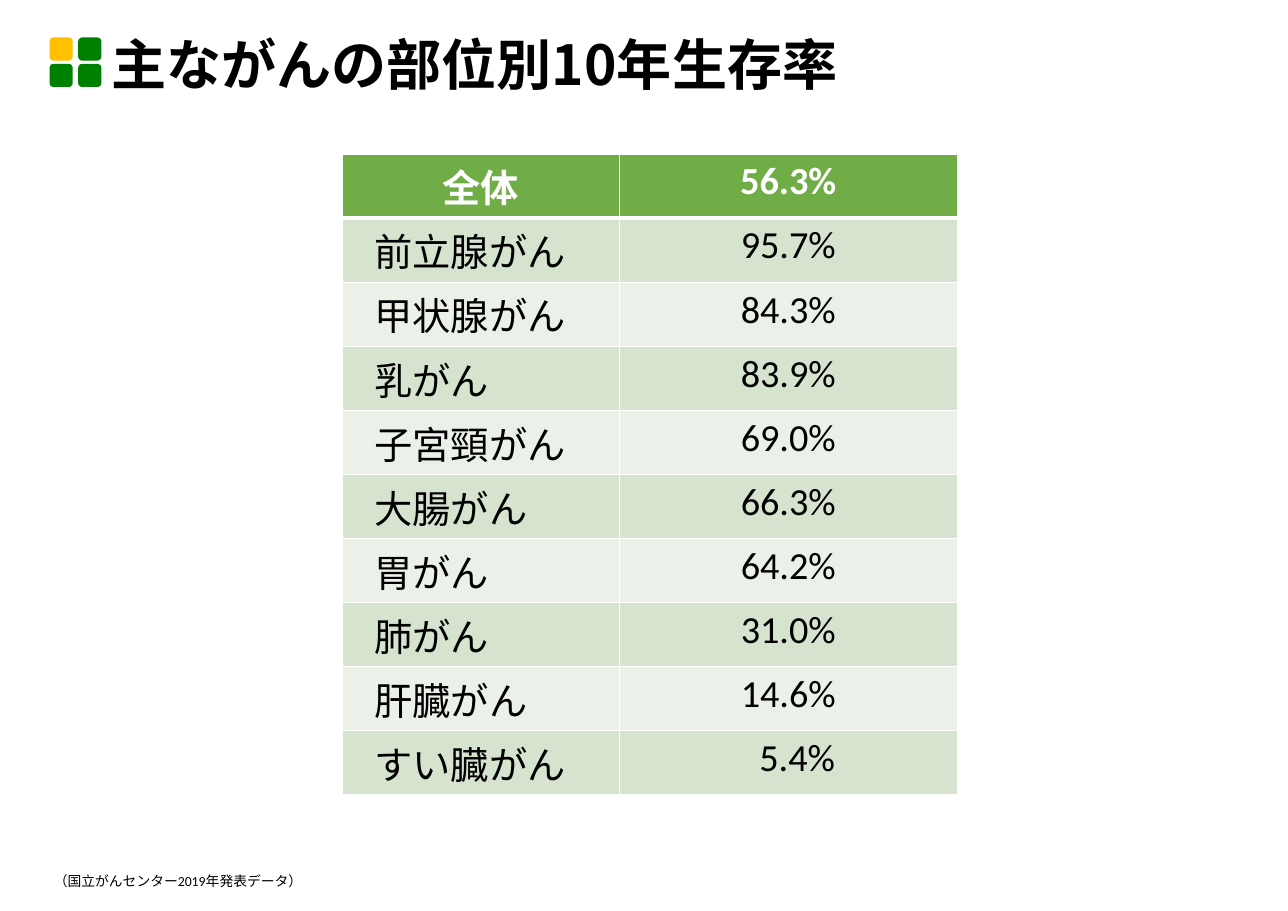
from lxml import etree
from pptx import Presentation
from pptx.dml.color import RGBColor
from pptx.enum.shapes import MSO_SHAPE
from pptx.enum.text import MSO_ANCHOR, MSO_AUTO_SIZE, PP_ALIGN
from pptx.oxml.ns import qn
from pptx.util import Inches, Pt

COLORS = {
    "white": "FFFFFF",
    "black": "000000",
    "header": "70AD47",
    "dark_band": "D5E3CF",
    "light_band": "EBF1E9",
    "yellow": "FFC000",
    "green": "008000",
}
LATIN_FONT = "Calibri"
JAPANESE_FONT = "Noto Sans CJK JP"
SURVIVAL_RATES = [
    ("全体", "56.3%"),
    ("前立腺がん", "95.7%"),
    ("甲状腺がん", "84.3%"),
    ("乳がん", "83.9%"),
    ("子宮頸がん", "69.0%"),
    ("大腸がん", "66.3%"),
    ("胃がん", "64.2%"),
    ("肺がん", "31.0%"),
    ("肝臓がん", "14.6%"),
    ("すい臓がん", "5.4%"),
]


def rgb(name):
    return RGBColor.from_string(COLORS[name])


def format_text(paragraph, size, color="black", bold=False, latin=LATIN_FONT):
    for run in paragraph.runs:
        font = run.font
        font.size = Pt(size)
        font.bold = bold
        font.name = latin
        font.color.rgb = rgb(color)
        east_asian = etree.SubElement(font._element, qn("a:ea"))
        east_asian.set("typeface", JAPANESE_FONT)


def add_title(slide, text):
    title = slide.shapes.title
    title.left, title.top = Inches(0.91), Inches(0.27)
    title.width, title.height = Inches(9.92), Inches(0.68)
    frame = title.text_frame
    frame.text = text
    frame.auto_size = MSO_AUTO_SIZE.NONE
    frame.vertical_anchor = MSO_ANCHOR.MIDDLE
    paragraph = frame.paragraphs[0]
    paragraph.alignment = PP_ALIGN.LEFT
    paragraph.line_spacing = 0.9
    format_text(paragraph, 36, bold=True, latin=JAPANESE_FONT)


def add_title_mark(slide):
    group = slide.shapes.add_group_shape()
    for row in range(2):
        for column in range(2):
            square = group.shapes.add_shape(
                MSO_SHAPE.ROUNDED_RECTANGLE,
                Inches(0.45 + 0.26 * column), Inches(0.34 + 0.24 * row),
                Inches(0.21), Inches(0.21))
            square.shadow.inherit = False
            square.fill.solid()
            square.fill.fore_color.rgb = rgb("green" if row or column else "yellow")
            square.line.fill.background()


def set_borders(cell, bottom_width):
    properties = cell._tc.get_or_add_tcPr()
    for side, width in (("L", 1), ("R", 1), ("T", 1), ("B", bottom_width)):
        line = etree.SubElement(properties, qn(f"a:ln{side}"), w=str(Pt(width)))
        fill = etree.SubElement(line, qn("a:solidFill"))
        etree.SubElement(fill, qn("a:srgbClr"), val=COLORS["white"])


def set_cell(cell, text, fill, centered, indent, header):
    set_borders(cell, 3 if header else 1)
    cell.fill.solid()
    cell.fill.fore_color.rgb = rgb(fill)
    cell.margin_left = cell.margin_right = Inches(0.09)
    cell.margin_top = cell.margin_bottom = Inches(0.04)
    cell.text_frame.text = text
    paragraph = cell.text_frame.paragraphs[0]
    paragraph.alignment = PP_ALIGN.CENTER if centered else PP_ALIGN.LEFT
    if indent:
        paragraph._p.get_or_add_pPr().set("marL", str(Inches(indent)))
    format_text(paragraph, 25, "white" if header else "black", bold=header)


def add_rate_table(slide):
    table = slide.shapes.add_table(
        len(SURVIVAL_RATES), 2,
        Inches(3.11), Inches(1.4), Inches(5.58), Inches(5.68)).table
    table.columns[0].width = Inches(2.51)
    table.columns[1].width = Inches(3.07)
    for index, (site, rate) in enumerate(SURVIVAL_RATES):
        header = index == 0
        fill = "header" if header else "dark_band" if index % 2 else "light_band"
        rate_indent = 0.16 if len(rate) < 5 else 0
        set_cell(table.cell(index, 0), site, fill, header, 0 if header else 0.2, header)
        set_cell(table.cell(index, 1), rate, fill, True, rate_indent, header)


def add_source_note(slide, text):
    box = slide.shapes.add_textbox(
        Inches(0.39), Inches(7.87), Inches(4.28), Inches(0.25))
    frame = box.text_frame
    frame.word_wrap = True
    frame.auto_size = MSO_AUTO_SIZE.SHAPE_TO_FIT_TEXT
    frame.text = text
    format_text(frame.paragraphs[0], 9)


def main():
    presentation = Presentation()
    presentation.slide_width = Inches(11.69)
    presentation.slide_height = Inches(8.27)
    slide = presentation.slides.add_slide(presentation.slide_layouts[5])
    add_rate_table(slide)
    add_source_note(slide, "（国立がんセンター2019年発表データ）")
    add_title_mark(slide)
    add_title(slide, "主ながんの部位別10年生存率")
    presentation.save("out.pptx")


if __name__ == "__main__":
    main()
